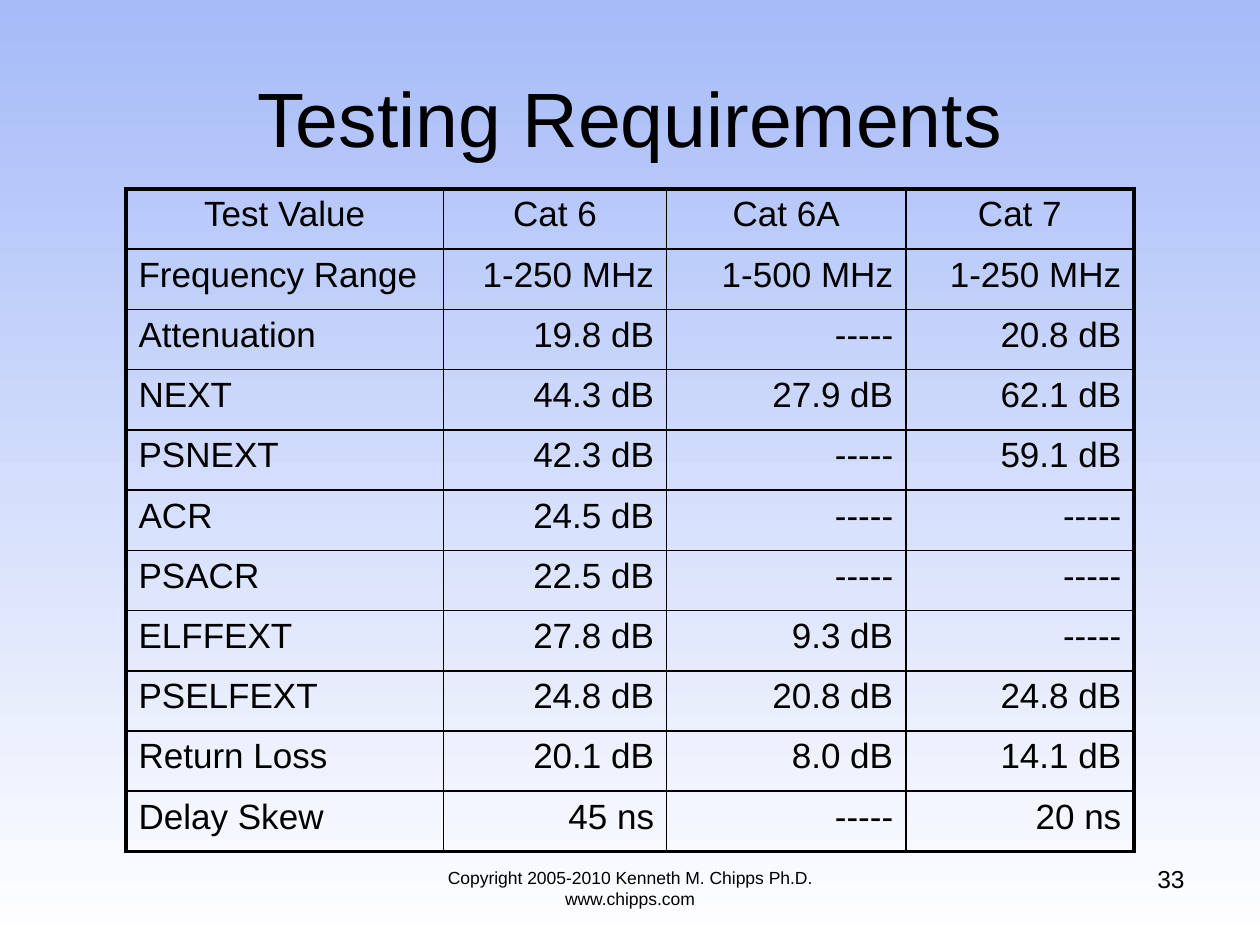
from lxml import etree
from pptx import Presentation
from pptx import util as u
from pptx.dml.color import RGBColor
from pptx.enum import text
from pptx.oxml import ns

BLACK = RGBColor(0x00, 0x00, 0x00)
SKY = RGBColor(0xA6, 0xBB, 0xF8)
WHITE = RGBColor(0xFF, 0xFF, 0xFF)
LEFT, CENTER, RIGHT = (text.PP_ALIGN.LEFT, text.PP_ALIGN.CENTER,
                       text.PP_ALIGN.RIGHT)
THIN, THICK = u.Pt(1), u.Pt(2.25)
COLUMN_WIDTHS = (6.4, 4.5, 4.82, 4.6)
NONE = "-----"
REQUIREMENTS = (
    ("Test Value", "Cat 6", "Cat 6A", "Cat 7"),
    ("Frequency Range", "1-250 MHz", "1-500 MHz", "1-250 MHz"),
    ("Attenuation", "19.8 dB", NONE, "20.8 dB"),
    ("NEXT", "44.3 dB", "27.9 dB", "62.1 dB"),
    ("PSNEXT", "42.3 dB", NONE, "59.1 dB"),
    ("ACR", "24.5 dB", NONE, NONE),
    ("PSACR", "22.5 dB", NONE, NONE),
    ("ELFFEXT", "27.8 dB", "9.3 dB", NONE),
    ("PSELFEXT", "24.8 dB", "20.8 dB", "24.8 dB"),
    ("Return Loss", "20.1 dB", "8.0 dB", "14.1 dB"),
    ("Delay Skew", "45 ns", NONE, "20 ns"),
)


def apply(target, values):
    """Set each attribute of the target from a dict of values."""
    for name, value in values.items():
        setattr(target, name, value)


def write(frame, words, size, alignment):
    """Write one formatted paragraph into a text frame and return it."""
    para = frame.paragraphs[0]
    para.alignment = alignment
    span = para.add_run()
    span.text = words
    apply(span.font, {"name": "Arial", "size": u.Pt(size), "bold": False})
    span.font.color.rgb = BLACK
    return para


def paint_background(page):
    """Fill the page with a gradient from sky at the top to white."""
    fill = page.background.fill
    fill.gradient()
    fill.gradient_angle = 270
    for stop, color in zip(fill.gradient_stops, (SKY, WHITE)):
        stop.color.rgb = color


def place_title(page, box, words):
    """Place the title placeholder in the box."""
    title = page.shapes.title
    apply(title, dict(zip(("left", "top", "width", "height"), box)))
    title.text_frame.vertical_anchor = text.MSO_ANCHOR.MIDDLE
    write(title.text_frame, words, 44, CENTER)


def place_note(page, box, words, size, alignment):
    """Place a wrapped line of footer text in the box."""
    frame = page.shapes.add_textbox(*box).text_frame
    frame.word_wrap = True
    write(frame, words, size, alignment)


def draw_borders(cell, widths):
    """Draw the four sides of a cell in black at the given widths."""
    properties = cell._tc.get_or_add_tcPr()
    for index, (side, width) in enumerate(widths.items()):
        line = etree.Element(ns.qn(f"a:{side}"), w=str(width))
        fill = etree.SubElement(line, ns.qn("a:solidFill"))
        etree.SubElement(fill, ns.qn("a:srgbClr"), val=str(BLACK))
        properties.insert(index, line)


def add_space_before(para, percent):
    """Put space before a paragraph as a share of its text size."""
    space = etree.SubElement(para._p.get_or_add_pPr(), ns.qn("a:spcBef"))
    etree.SubElement(space, ns.qn("a:spcPct"), val=str(percent * 1000))


def place_table(page, box, rows):
    """Place the table of requirements in the box with equal row heights."""
    last_row, last_column = len(rows) - 1, len(COLUMN_WIDTHS) - 1
    table = page.shapes.add_table(len(rows), len(COLUMN_WIDTHS), *box).table
    apply(table, {"first_row": False, "horz_banding": False})
    for column, width in zip(table.columns, COLUMN_WIDTHS):
        column.width = u.Cm(width)
    for r, row in enumerate(rows):
        table.rows[r].height = box[3] // len(rows)
        for c, words in enumerate(row):
            cell = table.cell(r, c)
            cell.fill.background()
            alignment = CENTER if r == 0 else LEFT if c == 0 else RIGHT
            add_space_before(write(cell.text_frame, words, 20, alignment), 20)
            draw_borders(cell, {
                "lnL": THICK if c == 0 else THIN,
                "lnR": THICK if c == last_column else THIN,
                "lnT": THICK if r == 0 else THIN,
                "lnB": THICK if r == last_row else THIN,
            })


def lengths(*values):
    """Turn centimetres into a box of left, top, width and height."""
    return tuple(u.Cm(value) for value in values)


def main():
    """Build the deck and save it."""
    deck = Presentation()
    apply(deck, {"slide_width": u.Cm(25.4), "slide_height": u.Cm(19.05)})
    page = deck.slides.add_slide(deck.slide_layouts[5])
    paint_background(page)
    place_note(page, lengths(7.62, 17.35, 10.16, 1.32),
               "Copyright 2005-2010 Kenneth M. Chipps Ph.D. www.chipps.com",
               10, CENTER)
    place_note(page, lengths(18.2, 17.3, 5.93, 1.32), "33", 14, RIGHT)
    place_title(page, lengths(1.27, 0.76, 22.86, 3.18), "Testing Requirements")
    place_table(page, lengths(2.54, 3.81, 20.32, 13.36), REQUIREMENTS)
    deck.save("out.pptx")


if __name__ == "__main__":
    main()
